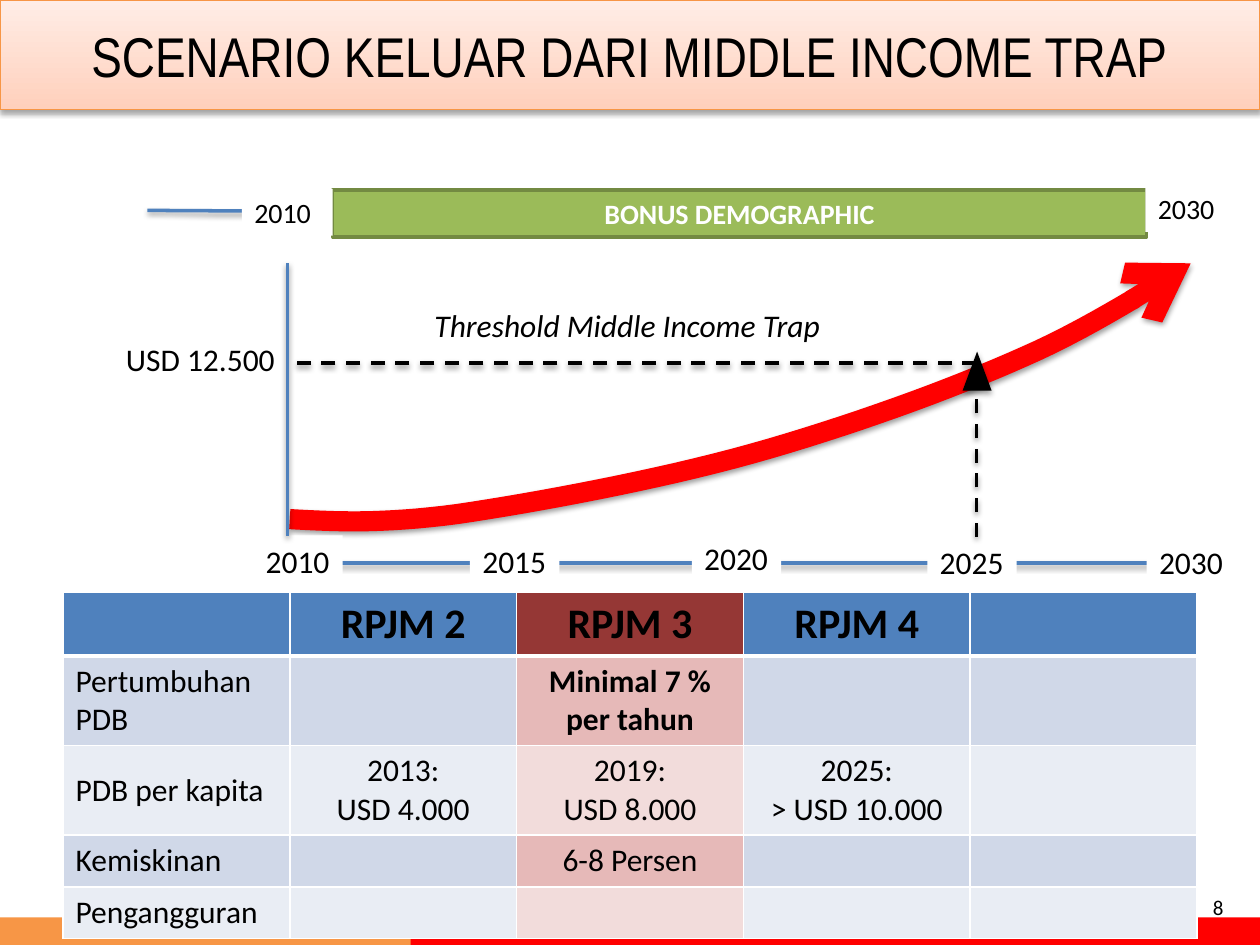
"""Builds the slide on leaving the middle income trap, on a grid of 100 columns by 75 rows."""
from dataclasses import dataclass, field
from typing import Any, Optional

from lxml import etree
from pptx import Presentation
from pptx import util as u
from pptx.dml.color import RGBColor
from pptx.enum import dml, shapes, text
from pptx.oxml import ns, parse_xml

WHITE = RGBColor(0xFF, 0xFF, 0xFF)
BLACK = RGBColor(0, 0, 0)
RED = RGBColor(0xFF, 0, 0)
ORANGE = RGBColor(0xF7, 0x96, 0x46)
BLUE = RGBColor(0x4F, 0x81, 0xBD)
GREEN = RGBColor(0x9B, 0xBB, 0x59)
DARK_GREEN = RGBColor(0x73, 0x8A, 0x42)
PEACH_TOP = RGBColor(0xFF, 0xED, 0xE6)
PEACH_BOTTOM = RGBColor(0xFF, 0xD0, 0xBC)
HEADER_FILLS = BLUE, RGBColor(0x95, 0x37, 0x35)
BAND_FILLS = (
    (RGBColor(0xD0, 0xD8, 0xE8), RGBColor(0xE6, 0xB9, 0xB8)),
    (RGBColor(0xE9, 0xED, 0xF4), RGBColor(0xF2, 0xDC, 0xDB)),
)
LEFT, CENTER, RIGHT = text.PP_ALIGN.LEFT, text.PP_ALIGN.CENTER, text.PP_ALIGN.RIGHT
TOP, MIDDLE = text.MSO_ANCHOR.TOP, text.MSO_ANCHOR.MIDDLE
RECTANGLE = shapes.MSO_SHAPE.RECTANGLE
TRIANGLE = shapes.MSO_SHAPE.ISOSCELES_TRIANGLE
COLUMNS, ROWS = 100, 75
FOCUS_COLUMN = 2
ROW_HEIGHTS = 5, 7, 7, 4.1, 4.1
TABLE_ROWS = (
    ("", "RPJM 2", "RPJM 3", "RPJM 4", ""),
    ("Pertumbuhan PDB", "", "Minimal 7 %\nper tahun", "", ""),
    ("PDB per kapita", "2013:\nUSD 4.000", "2019:\nUSD 8.000", "2025:\n> USD 10.000", ""),
    ("Kemiskinan", "", "6-8 Persen", "", ""),
    ("Pengangguran", "", "", "", ""),
)
CURVE = (
    (23, 41.2), (26.6, 41.4), (30.2, 41.6), (36.3, 40.8), (42.4, 39.9), (52.2, 38.1),
    (59.7, 36), (67.2, 33.9), (75.5, 30.9), (81.3, 28.3), (87.1, 25.8), (94.5, 20.9), (94.5, 20.9),
)


@dataclass(frozen=True)
class Block:
    """A filled or plain box, placed by column and row."""

    column: float
    row: float
    width: float
    height: float
    fill: Optional[RGBColor] = None
    words: str = ""
    align: Any = LEFT
    anchor: Any = TOP
    wrap: bool = True
    outline: Optional[RGBColor] = None
    shade: bool = False
    kind: Any = RECTANGLE
    font: dict[str, Any] = field(default_factory=dict)


@dataclass(frozen=True)
class Stroke:
    """A straight line between two grid points."""

    start: tuple[float, float]
    end: tuple[float, float]
    color: RGBColor
    dash: Any = None


def grid(count: float) -> int:
    """Turns grid steps into a length."""
    return u.Inches(count / 10)


def add_shadow(shape: Any, strength: int = 38) -> None:
    """Gives a shape a soft shadow below it."""
    properties = shape._element.spPr
    for old in properties.findall(ns.qn("a:effectLst")):
        properties.remove(old)
    properties.append(parse_xml(
        f'<a:effectLst {ns.nsdecls("a")}><a:outerShdw blurRad="40000" dist="21600" dir="5400000" '
        f'rotWithShape="0"><a:srgbClr val="000000"><a:alpha val="{strength}000"/></a:srgbClr>'
        '</a:outerShdw></a:effectLst>'))


def write(frame: Any, words: str, align: Any, formats: dict[str, Any]) -> None:
    """Fills a text frame, one paragraph to a line."""
    values = {"name": "Calibri", "size": u.Pt(18), "bold": False, "italic": False} | formats
    color = values.pop("color", BLACK)
    for index, line in enumerate(words.split("\n")):
        para = frame.add_paragraph() if index else frame.paragraphs[0]
        para.alignment = align
        span = para.add_run()
        span.text = line
        for name, value in values.items():
            setattr(span.font, name, value)
        span.font.color.rgb = color


def add_block(page: Any, block: Block) -> Any:
    """Draws one box with its words."""
    place = [grid(n) for n in (block.column, block.row, block.width, block.height)]
    if block.fill is None:
        box = page.shapes.add_textbox(*place)
    else:
        box = page.shapes.add_shape(block.kind, *place)
        box.shadow.inherit = False
        box.fill.solid()
        box.fill.fore_color.rgb = block.fill
        if block.outline is None:
            box.line.fill.background()
        else:
            box.line.color.rgb = block.outline
            box.line.width = u.Pt(2)
    if block.shade:
        add_shadow(box, 35)
    if block.words:
        frame = box.text_frame
        frame.word_wrap = block.wrap
        frame.vertical_anchor = block.anchor
        write(frame, block.words, block.align, block.font)
    return box


def add_stroke(page: Any, stroke: Stroke) -> None:
    """Draws one shadowed line."""
    line = page.shapes.add_connector(
        shapes.MSO_CONNECTOR.STRAIGHT, *map(grid, stroke.start + stroke.end))
    line.line.color.rgb = stroke.color
    line.line.width = u.Pt(2)
    if stroke.dash:
        line.line.dash_style = stroke.dash
    add_shadow(line)


def add_curve(page: Any, steps: int = 16) -> None:
    """Draws the growth curve, sampled from its cubic segments."""
    points = []
    for first in range(0, len(CURVE) - 1, 3):
        a, b, c, d = CURVE[first:first + 4]
        for step in range(1, steps + 1):
            t = step / steps
            points.append(tuple(
                grid((1 - t) ** 3 * a[k] + 3 * t * (1 - t) ** 2 * b[k]
                     + 3 * t * t * (1 - t) * c[k] + t ** 3 * d[k]) for k in (0, 1)))
    builder = page.shapes.build_freeform(*map(grid, CURVE[0]))
    builder.add_line_segments(points, close=False)
    curve = builder.convert_to_shape()
    curve.fill.background()
    curve.line.color.rgb = RED
    curve.line.width = u.Pt(11.5)
    outline = curve.line._get_or_add_ln()
    etree.SubElement(outline, ns.qn("a:round"))
    etree.SubElement(outline, ns.qn("a:tailEnd"), type="arrow")
    add_shadow(curve)


def add_plan_table(page: Any) -> None:
    """Draws the plan table with white cell borders."""
    count = len(TABLE_ROWS[0])
    table = page.shapes.add_table(
        len(TABLE_ROWS), count, grid(5), grid(47), grid(90), grid(sum(ROW_HEIGHTS))).table
    for r, (height, words_row) in enumerate(zip(ROW_HEIGHTS, TABLE_ROWS)):
        table.rows[r].height = grid(height)
        for c, words in enumerate(words_row):
            cell = table.cell(r, c)
            properties = cell._tc.get_or_add_tcPr()
            for side in "LRTB":
                weight = 3 if (r, side) in ((0, "B"), (1, "T")) else 1
                properties.append(parse_xml(
                    f'<a:ln{side} {ns.nsdecls("a")} w="{u.Pt(weight)}"><a:solidFill>'
                    f'<a:srgbClr val="{WHITE}"/></a:solidFill></a:ln{side}>'))
            fills = BAND_FILLS[(r - 1) % 2] if r else HEADER_FILLS
            cell.fill.solid()
            cell.fill.fore_color.rgb = fills[c == FOCUS_COLUMN]
            cell.vertical_anchor = MIDDLE if (r, c) == (2, 0) else TOP
            if words:
                formats = {"size": u.Pt(18 if r else 24), "bold": r == 0 or (r, c) == (1, FOCUS_COLUMN)}
                write(cell.text_frame, words, CENTER if c else LEFT, formats)


def add_title(page: Any) -> None:
    """Draws the title band."""
    box = add_block(page, Block(
        0, 0, COLUMNS, 8.7, PEACH_TOP, "SCENARIO KELUAR DARI MIDDLE INCOME TRAP", CENTER, MIDDLE,
        outline=ORANGE, shade=True, font={"name": "Arial Narrow", "size": u.Pt(32)}))
    box.line.width = u.Pt(0.75)
    box.fill.gradient()
    box.fill.gradient_angle = 270
    for stop, color in zip(box.fill.gradient_stops, (PEACH_TOP, PEACH_BOTTOM)):
        stop.color.rgb = color


def main() -> None:
    """Builds and saves the deck."""
    deck = Presentation()
    deck.slide_width, deck.slide_height = grid(COLUMNS), grid(ROWS)
    page = deck.slides.add_slide(deck.slide_layouts[6])
    dash = dml.MSO_LINE.DASH
    small = {"size": u.Pt(16)}
    years = ((37.3, 42.5, "2015"), (54.9, 42.3, "2020"), (73.6, 42.6, "2025"),
             (91, 42.6, "2030"), (20.1, 42.5, "2010"))
    add_block(page, Block(0, 72.8, 37.7, 2.2, ORANGE))
    add_block(page, Block(32.6, 72.8, 67.4, 2.2, RED))
    add_plan_table(page)
    add_stroke(page, Stroke((23, 44.7), (94.5, 44.7), BLUE))
    add_curve(page)
    for column, row, year in years:
        add_block(page, Block(column, row, 7.1, 4, WHITE, year, wrap=False))
    for stroke in (Stroke((77.5, 42.6), (77.5, 31), BLACK, dash),
                   Stroke((22.8, 42.5), (22.8, 20.9), BLUE),
                   Stroke((77.5, 28.8), (23, 28.8), BLACK, dash),
                   Stroke((11.7, 16.7), (96.6, 17.2), BLUE)):
        add_stroke(page, stroke)
    for block in (
        Block(33.5, 23.8, 37.7, 4, words="Threshold Middle Income Trap", font={"italic": True}),
        Block(6.5, 26.5, 16.3, 4, words="USD 12.500", align=RIGHT),
        Block(76.4, 27.9, 2.3, 3.1, BLACK, shade=True, kind=TRIANGLE),
        Block(26.4, 15.1, 64.6, 3.7, GREEN, "BONUS DEMOGRAPHIC", CENTER, outline=DARK_GREEN,
              font=small | {"bold": True, "color": WHITE}),
        Block(19.2, 15, 7.2, 3.7, WHITE, "2010", wrap=False, font=small),
        Block(90.9, 14.7, 7.2, 3.7, WHITE, "2030", wrap=False, font=small),
        Block(74.8, 70, 23.3, 4, words="8", align=RIGHT, anchor=MIDDLE, font={"size": u.Pt(12)}),
    ):
        add_block(page, block)
    add_title(page)
    deck.save("out.pptx")


if __name__ == "__main__":
    main()
